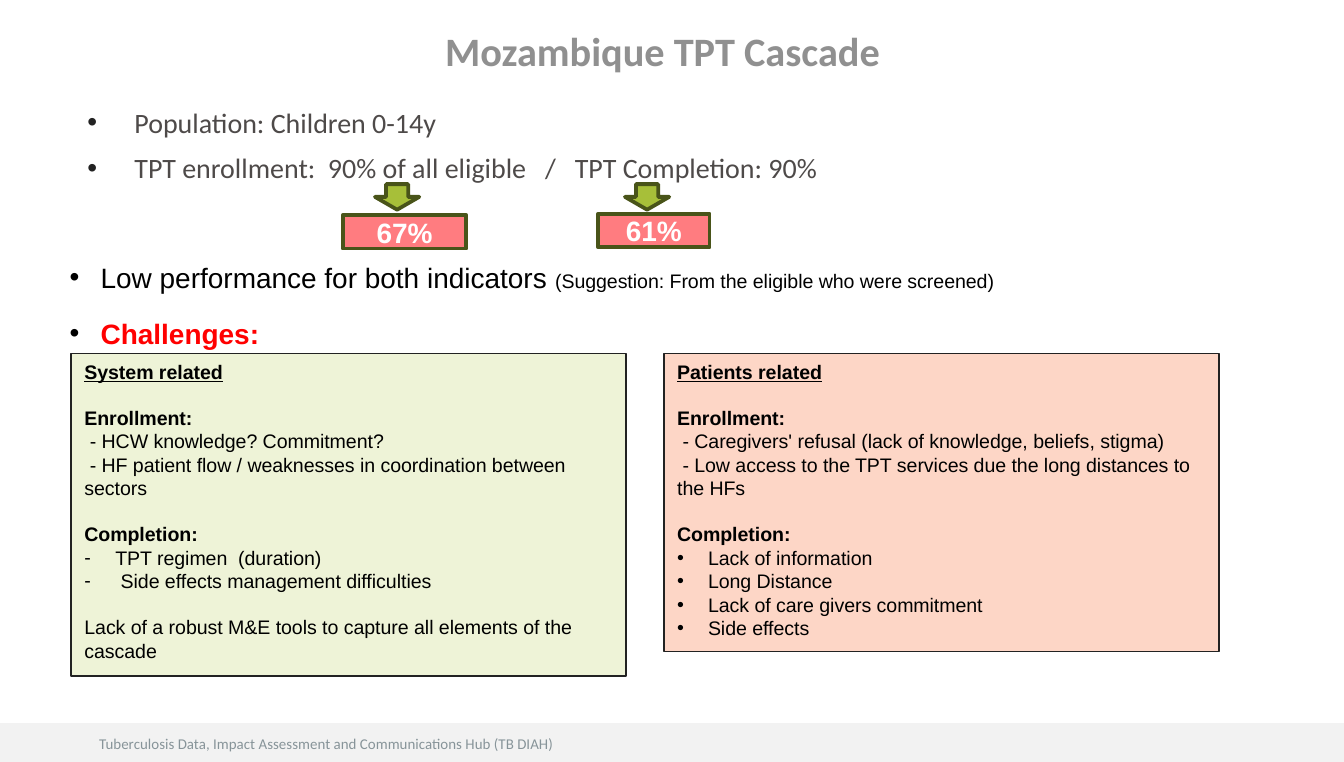
"""Build the Mozambique TPT cascade slide."""
from dataclasses import dataclass, replace

from lxml import etree
from pptx import Presentation
from pptx.dml.color import RGBColor
from pptx.enum.shapes import MSO_SHAPE
from pptx.enum.text import MSO_ANCHOR, PP_ALIGN
from pptx.oxml.ns import qn
from pptx.util import Emu, Pt

PX = 9144
RECTANGLE = MSO_SHAPE.RECTANGLE
DOWN_ARROW = MSO_SHAPE.DOWN_ARROW
TOP, MIDDLE = MSO_ANCHOR.TOP, MSO_ANCHOR.MIDDLE
LEFT, CENTER = PP_ALIGN.LEFT, PP_ALIGN.CENTER
BLACK, DARK, OLIVE = "000000", "222222", "495419"
BLANK_LINE = 12


@dataclass(frozen=True)
class Box:
    left: int
    top: int
    width: int
    height: int


@dataclass(frozen=True)
class Words:
    text: str
    size: float = 10.5
    color: str = BLACK
    bold: bool = False
    underline: bool = False
    font: str = "Arial"


@dataclass(frozen=True)
class Line:
    words: tuple[Words, ...]
    space_before: float = 0
    spacing: float = 1.0
    align: PP_ALIGN = LEFT
    bullet: str = ""
    bullet_color: str = BLACK
    margin: int = 23
    hanging: int = 23


@dataclass(frozen=True)
class Result:
    text: str
    arrow: Box
    box: Box


@dataclass(frozen=True)
class Panel:
    box: Box
    fill: str
    lines: tuple[Line, ...]


def plain(text: str, space_before: float = 0) -> Line:
    return Line((Words(text),), space_before)


def heading(text: str) -> Line:
    return Line((Words(text, bold=True),), BLANK_LINE)


def panel_title(text: str) -> Line:
    return Line((Words(text, bold=True, underline=True),))


def item(text: str, bullet: str) -> Line:
    return Line((Words(text),), bullet=bullet)


def body_line(text: str, space_before: float) -> Line:
    return Line((Words(text, 15, "4E4A49", font="Calibri"),), space_before, 0.9,
                bullet="•", bullet_color=DARK, margin=50, hanging=35)


SYSTEM_LINES = (
    panel_title("System related"),
    heading("Enrollment:"),
    plain(" - HCW knowledge? Commitment?"),
    plain(" - HF patient flow / weaknesses in coordination between sectors"),
    heading("Completion:"),
    item("TPT regimen  (duration)", "-"),
    item(" Side effects management difficulties", "-"),
    plain("Lack of a robust M&E tools to capture all elements of the cascade", BLANK_LINE),
)
PATIENT_LINES = (
    panel_title("Patients related"),
    heading("Enrollment:"),
    plain(" - Caregivers' refusal (lack of knowledge, beliefs, stigma)"),
    plain(" - Low access to the TPT services due the long distances to the HFs"),
    heading("Completion:"),
    *(item(text, "•") for text in (
        "Lack of information", "Long Distance",
        "Lack of care givers commitment", "Side effects")),
)
PANELS = (
    Panel(Box(53, 263, 413, 240), "EEF3D7", SYSTEM_LINES),
    Panel(Box(494, 263, 413, 222), "FDD6C6", PATIENT_LINES),
)
RESULTS = (
    Result("67%", Box(279, 137, 33, 19), Box(255, 160, 92, 25)),
    Result("61%", Box(465, 137, 33, 19), Box(445, 159, 83, 25)),
)
TITLE = Line((Words("Mozambique TPT Cascade", 21.6, "909090", True, font="Calibri"),),
             spacing=0.9, align=CENTER)
BODY = (
    body_line("Population: Children 0-14y", 0),
    body_line("TPT enrollment:  90% of all eligible   /   TPT Completion: 90%", 8),
)
FINDINGS = (
    Line((Words("Low performance for both indicators ", 15),
          Words("(Suggestion: From the eligible who were screened)")), bullet="•"),
    Line((Words("Challenges:", 15, "FF0000", True),), BLANK_LINE, bullet="•"),
)
FOOTER = Line((Words("Tuberculosis Data, Impact Assessment and Communications Hub (TB DIAH)",
                     8, "879499", font="Calibri"),))


def px(length: int) -> Emu:
    return Emu(length * PX)


def place(box: Box) -> tuple[Emu, Emu, Emu, Emu]:
    return px(box.left), px(box.top), px(box.width), px(box.height)


def rgb(color: str) -> RGBColor:
    return RGBColor.from_string(color)


def add_bullet(paragraph, line: Line) -> None:
    properties = paragraph._p.get_or_add_pPr()
    properties.set("marL", str(px(line.margin)))
    properties.set("indent", str(-px(line.hanging)))
    bullet_color = etree.SubElement(properties, qn("a:buClr"))
    etree.SubElement(bullet_color, qn("a:srgbClr")).set("val", line.bullet_color)
    etree.SubElement(properties, qn("a:buFont")).set("typeface", "Arial")
    etree.SubElement(properties, qn("a:buChar")).set("char", line.bullet)


def write(shape, lines: tuple[Line, ...], anchor=TOP, inset: tuple[int, int] = (10, 5)) -> None:
    frame = shape.text_frame
    frame.word_wrap = True
    frame.vertical_anchor = anchor
    frame.margin_left = frame.margin_right = px(inset[0])
    frame.margin_top = frame.margin_bottom = px(inset[1])
    for index, line in enumerate(lines):
        paragraph = frame.add_paragraph() if index else frame.paragraphs[0]
        paragraph.alignment = line.align
        paragraph.line_spacing = line.spacing
        paragraph.space_before = Pt(line.space_before)
        if line.bullet:
            add_bullet(paragraph, line)
        for words in line.words:
            run = paragraph.add_run()
            run.text = words.text
            run.font.name = words.font
            run.font.size = Pt(words.size)
            run.font.bold = words.bold
            run.font.underline = words.underline
            run.font.color.rgb = rgb(words.color)


def add_text(slide, box: Box, lines: tuple[Line, ...], anchor=TOP,
             inset: tuple[int, int] = (10, 5)) -> None:
    write(slide.shapes.add_textbox(*place(box)), lines, anchor, inset)


def add_block(slide, kind: MSO_SHAPE, box: Box, fill: str, line: str = "", weight: float = 0):
    shape = slide.shapes.add_shape(kind, *place(box))
    shape.shadow.inherit = False
    shape.fill.solid()
    shape.fill.fore_color.rgb = rgb(fill)
    if line:
        shape.line.color.rgb = rgb(line)
        shape.line.width = Pt(weight)
    else:
        shape.line.fill.background()
    return shape


def main() -> None:
    presentation = Presentation()
    presentation.slide_width, presentation.slide_height = px(1000), px(567)
    slide = presentation.slides.add_slide(presentation.slide_layouts[6])
    add_block(slide, RECTANGLE, Box(0, 538, 1000, 29), "F2F2F2")
    add_text(slide, Box(64, 542, 500, 24), (FOOTER,))
    add_text(slide, Box(62, 22, 862, 36), (TITLE,), MIDDLE, (7, 4))
    add_text(slide, Box(43, 77, 901, 148), BODY, inset=(7, 4))
    label = Line((Words("", 15, "FFFFFF", True),), align=CENTER)
    for result in RESULTS:
        add_block(slide, DOWN_ARROW, result.arrow, "A7BF39", OLIVE, 2)
        shape = add_block(slide, RECTANGLE, result.box, "FF7C80", OLIVE, 2)
        words = replace(label.words[0], text=result.text)
        write(shape, (replace(label, words=(words,)),), MIDDLE)
    add_text(slide, Box(42, 189, 911, 109), FINDINGS)
    for panel in PANELS:
        write(add_block(slide, RECTANGLE, panel.box, panel.fill, DARK, 0.75), panel.lines)
    presentation.save("out.pptx")


if __name__ == "__main__":
    main()
